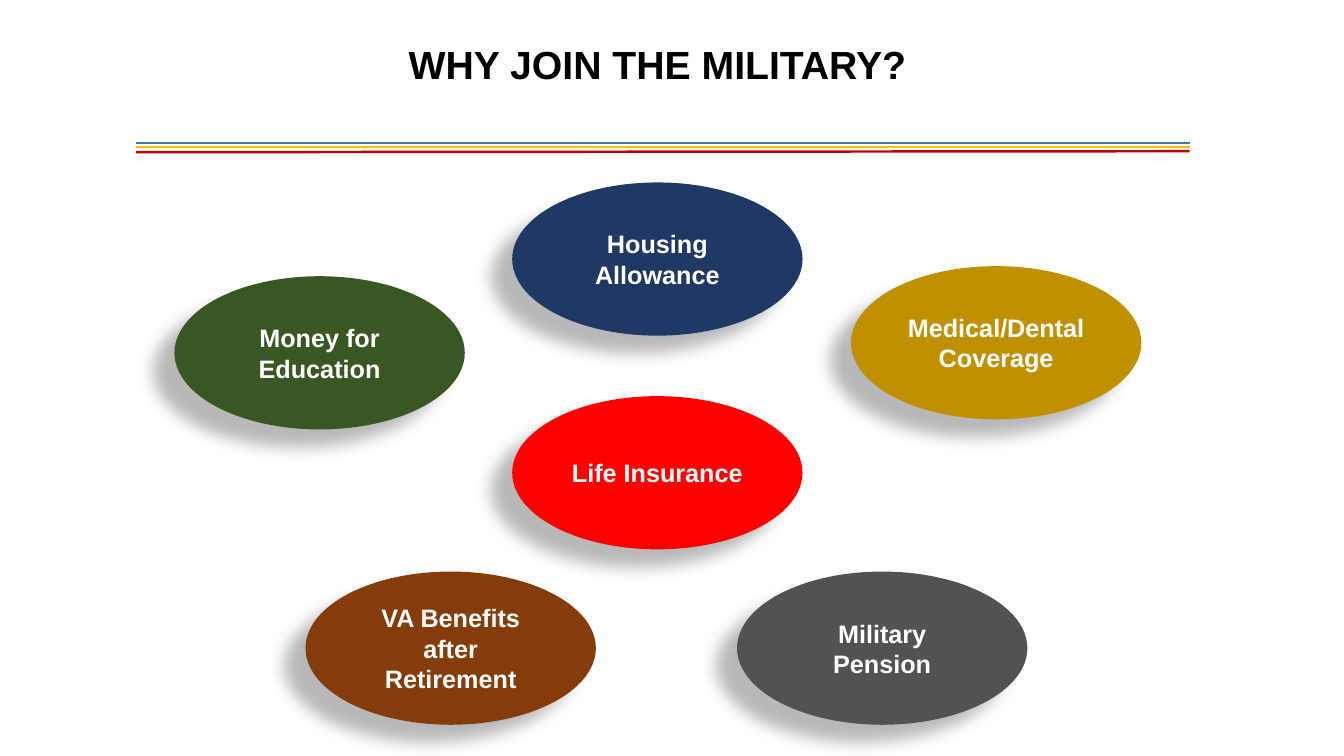
from dataclasses import dataclass

from lxml import etree
from pptx import Presentation
from pptx import util as u
from pptx.dml.color import RGBColor
from pptx.enum import shapes, text
from pptx.oxml import ns
from pptx.slide import Slide
from pptx.text.text import TextFrame

PX = 9144  # EMU per px, 100 px to the inch


@dataclass(frozen=True)
class Theme:
    font: str = "Arial"
    title_size: int = 28
    label_size: int = 18
    rule_width: float = 1.75
    ink: str = "000000"
    paper: str = "FFFFFF"
    blue: str = "4472C4"
    gold: str = "FFC000"
    crimson: str = "C00000"
    navy: str = "203864"
    green: str = "385723"
    mustard: str = "BF9000"
    red: str = "FF0000"
    brown: str = "843C0B"
    grey: str = "525252"


@dataclass(frozen=True)
class Rule:
    start_y: int
    end_y: int
    color: str


@dataclass(frozen=True)
class Benefit:
    label: str
    left: int
    top: int
    color: str


THEME = Theme()
PAGE_WIDTH, PAGE_HEIGHT = 1333, 750
RULE_LEFT, RULE_RIGHT = 135, 1180
OVAL_WIDTH, OVAL_HEIGHT = 288, 152
CENTER_LEFT = 508
BOTTOM_TOP = 567

RULES = [
    Rule(142, 142, THEME.blue),
    Rule(146, 146, THEME.gold),
    Rule(151, 150, THEME.crimson),
]
BENEFITS = [
    Benefit("Money for Education", 173, 274, THEME.green),
    Benefit("VA Benefits after Retirement", 303, BOTTOM_TOP, THEME.brown),
    Benefit("Life Insurance", CENTER_LEFT, 393, THEME.red),
    Benefit("Medical/Dental Coverage", 844, 264, THEME.mustard),
    Benefit("Military Pension", 731, BOTTOM_TOP, THEME.grey),
    Benefit("Housing Allowance", CENTER_LEFT, 181, THEME.navy),
]


def px(length: int) -> u.Emu:
    return u.Emu(length * PX)


def rgb(color: str) -> RGBColor:
    return RGBColor.from_string(color)


def write_centered(frame: TextFrame, words: str, size: int, color: str) -> None:
    frame.word_wrap = True
    frame.vertical_anchor = text.MSO_ANCHOR.MIDDLE
    para = frame.paragraphs[0]
    para.text = words
    para.alignment = text.PP_ALIGN.CENTER
    para.font.name = THEME.font
    para.font.size = u.Pt(size)
    para.font.bold = True
    para.font.color.rgb = rgb(color)


def add_title(page: Slide, words: str) -> None:
    box = page.shapes.add_textbox(px(99), px(11), px(1106), px(111))
    write_centered(box.text_frame, words, THEME.title_size, THEME.ink)
    box.text_frame.paragraphs[0].line_spacing = 0.9


def add_rule(page: Slide, rule: Rule) -> None:
    line = page.shapes.add_connector(
        shapes.MSO_CONNECTOR.STRAIGHT,
        px(RULE_LEFT), px(rule.start_y), px(RULE_RIGHT), px(rule.end_y))
    line.line.color.rgb = rgb(rule.color)
    line.line.width = u.Pt(THEME.rule_width)
    etree.SubElement(line.element.spPr, ns.qn("a:effectLst"))


def add_benefit(page: Slide, benefit: Benefit) -> None:
    oval = page.shapes.add_shape(
        shapes.MSO_SHAPE.OVAL,
        px(benefit.left), px(benefit.top), px(OVAL_WIDTH), px(OVAL_HEIGHT))
    oval.fill.solid()
    oval.fill.fore_color.rgb = rgb(benefit.color)
    oval.line.fill.background()
    write_centered(oval.text_frame, benefit.label, THEME.label_size, THEME.paper)

    # Soft shadow towards the lower left
    oval.shadow.inherit = False
    effects = oval.element.spPr.find(ns.qn("a:effectLst"))
    shadow = etree.SubElement(
        effects, ns.qn("a:outerShdw"), blurRad=str(u.Pt(11.8)),
        dist=str(u.Pt(19.7)), dir=str(141 * 60000), algn="ctr", rotWithShape="0")
    tint = etree.SubElement(shadow, ns.qn("a:srgbClr"), val=THEME.ink)
    etree.SubElement(tint, ns.qn("a:alpha"), val="28000")


def main() -> None:
    deck = Presentation()
    deck.slide_width, deck.slide_height = px(PAGE_WIDTH), px(PAGE_HEIGHT)
    page = deck.slides.add_slide(deck.slide_layouts[6])

    # Header
    for rule in RULES:
        add_rule(page, rule)
    add_title(page, "WHY JOIN THE MILITARY?")

    # Benefits
    for benefit in BENEFITS:
        add_benefit(page, benefit)

    deck.save("out.pptx")


if __name__ == "__main__":
    main()
